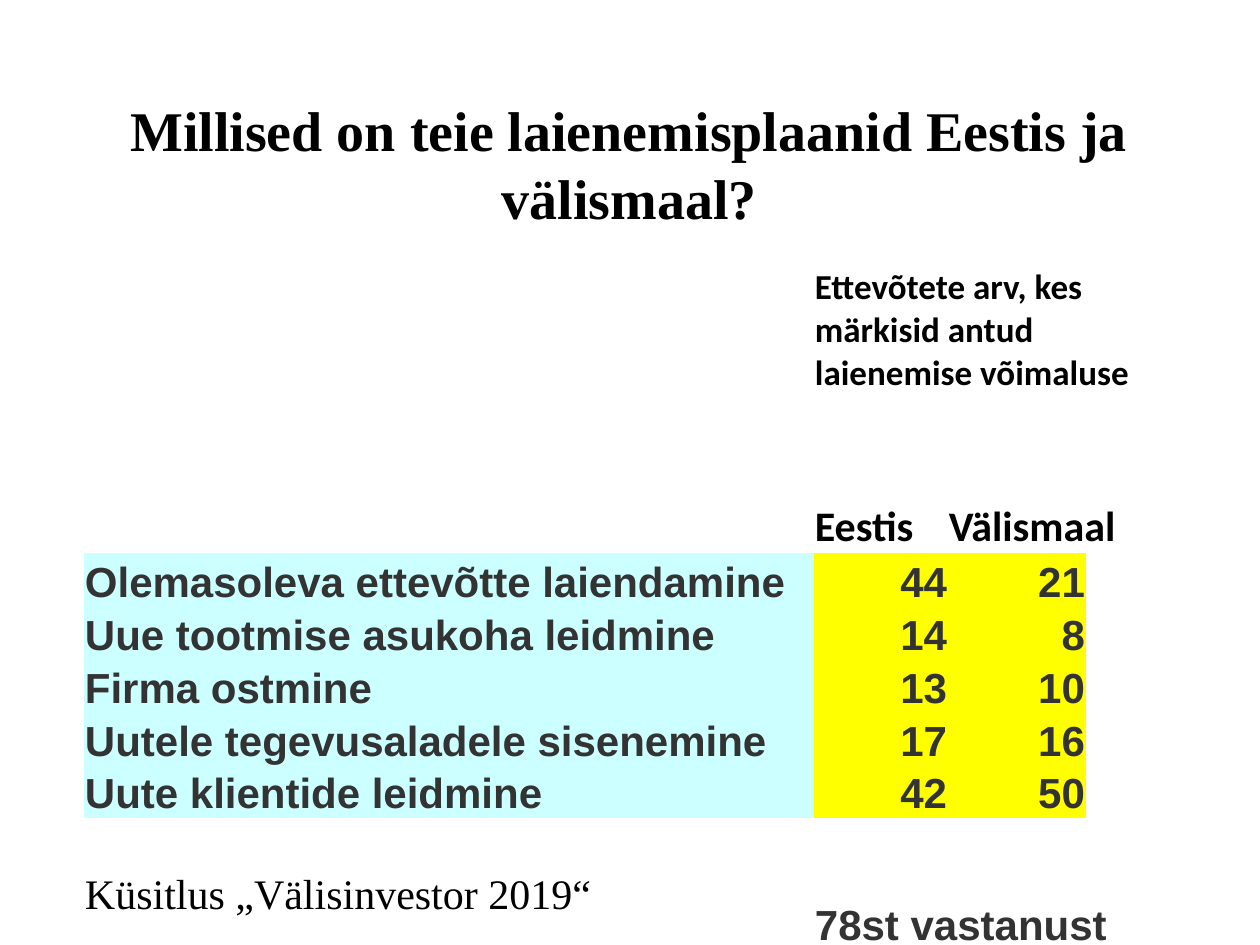
from pptx import Presentation
from pptx.dml.color import RGBColor
from pptx.enum.text import MSO_ANCHOR, PP_ALIGN
from pptx.util import Emu, Pt

TITLE = "Millised on teie laienemisplaanid Eestis ja välismaal?"
HEADING = "Ettevõtete arv, kes märkisid antud\nlaienemise võimaluse"
PLANS = [
    ("Olemasoleva ettevõtte laiendamine", 44, 21),
    ("Uue tootmise asukoha leidmine", 14, 8),
    ("Firma ostmine", 13, 10),
    ("Uutele tegevusaladele sisenemine", 17, 16),
    ("Uute klientide leidmine", 42, 50),
]
COLUMNS = [730, 134, 138, 69, 30]
ROWS = [129, 105, 54] + [53] * 6 + [79]
FIRST_PLAN_ROW = 3
NO_STYLE = "{2D5ABB26-0587-4C30-8999-92F81FD0307C}"
BLACK, GREY, CYAN, YELLOW = "000000", "333333", "CCFFFF", "FFFF00"


def px(length):
    return Emu(round(length * 914400 / 126))


def color(value):
    return RGBColor.from_string(value)


def write(frame, text, font, size, ink, bold=True, align=PP_ALIGN.LEFT):
    frame.text = text
    for paragraph in frame.paragraphs:
        paragraph.alignment = align
        paragraph.font.name = font
        paragraph.font.size = Pt(size)
        paragraph.font.bold = bold
        paragraph.font.color.rgb = color(ink)


def add_title(slide, left, top, width, height):
    shape = slide.shapes.add_textbox(px(left), px(top), px(width), px(height))
    frame = shape.text_frame
    frame.word_wrap = True
    frame.vertical_anchor = MSO_ANCHOR.MIDDLE
    write(frame, TITLE, "Times New Roman", 32, BLACK, align=PP_ALIGN.CENTER)


def fill_cell(cell, text, font, size, ink, fill=None, **options):
    write(cell.text_frame, text, font, size, ink, **options)
    if fill:
        cell.fill.solid()
        cell.fill.fore_color.rgb = color(fill)


def add_plans_table(slide, left, top, width, height):
    shape = slide.shapes.add_table(
        len(ROWS), len(COLUMNS), px(left), px(top), px(width), px(height))
    table = shape.table
    table.first_row = table.horz_banding = False
    shape._element.graphic.graphicData.tbl.tblPr.find("{*}tableStyleId").text = NO_STYLE
    for column, column_width in zip(table.columns, COLUMNS):
        column.width = px(column_width)
    for row, row_height in zip(table.rows, ROWS):
        row.height = px(row_height)
    for cell in table.iter_cells():
        cell.fill.background()
        cell.vertical_anchor = MSO_ANCHOR.BOTTOM
        cell.margin_left = cell.margin_right = cell.margin_top = px(1)
        cell.margin_bottom = 0

    last = len(ROWS) - 1
    for row, first, final in [(0, 1, 4), (1, 1, 4), (2, 2, 3), (last, 1, 3)]:
        table.cell(row, first).merge(table.cell(row, final))

    fill_cell(table.cell(0, 1), HEADING, "Calibri", 20, BLACK)
    for column, place in enumerate(("Eestis", "Välismaal"), 1):
        fill_cell(table.cell(2, column), place, "Calibri", 24, BLACK)
    for row, (plan, *counts) in enumerate(PLANS, FIRST_PLAN_ROW):
        fill_cell(table.cell(row, 0), plan, "Arial", 24, GREY, CYAN)
        for column, count in enumerate(counts, 1):
            fill_cell(table.cell(row, column), str(count), "Arial", 24, GREY,
                      YELLOW, align=PP_ALIGN.RIGHT)
    survey = table.cell(last, 0)
    survey.vertical_anchor = MSO_ANCHOR.TOP
    fill_cell(survey, "Küsitlus „Välisinvestor 2019“", "Times New Roman", 24,
              BLACK, bold=False)
    fill_cell(table.cell(last, 1), "78st vastanust", "Arial", 24, GREY)


def main():
    presentation = Presentation()
    presentation.slide_width = px(1260)
    presentation.slide_height = px(945)
    slide = presentation.slides.add_slide(presentation.slide_layouts[6])
    add_title(slide, 94, 84, 1071, 158)
    add_plans_table(slide, 84, 265, sum(COLUMNS), sum(ROWS))
    presentation.save("out.pptx")


if __name__ == "__main__":
    main()
